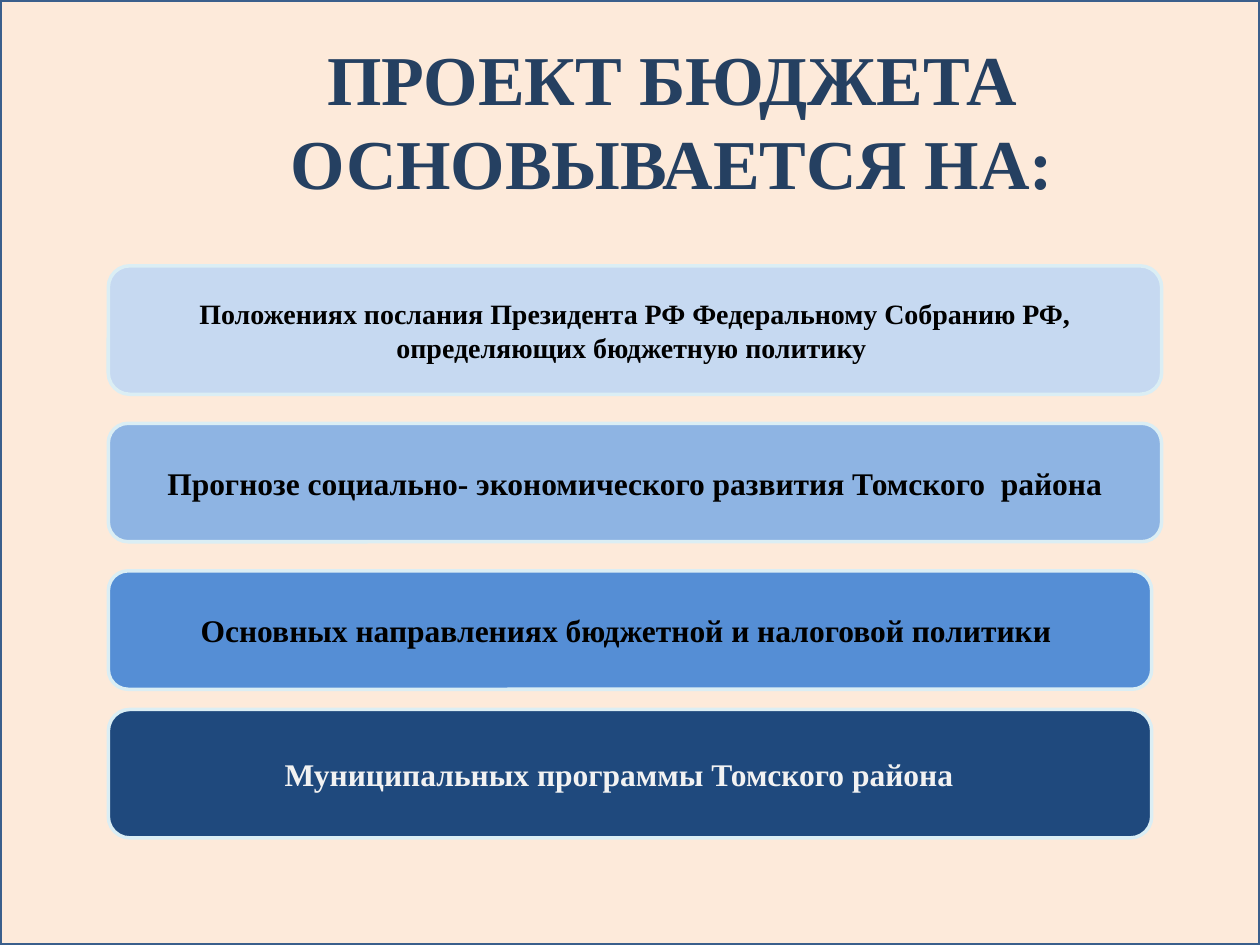
from pptx import Presentation
from pptx.dml.color import RGBColor
from pptx.enum import shapes, text
from pptx.util import Pt

FONT = "Times New Roman"
CREAM = RGBColor(0xFD, 0xEA, 0xDA)
FRAME = RGBColor(0x3A, 0x5F, 0x8C)
NAVY = RGBColor(0x25, 0x40, 0x61)
BAR_EDGE = RGBColor(0xDB, 0xEE, 0xF4)
PALE_BLUE = RGBColor(0xC6, 0xD9, 0xF1)
LIGHT_BLUE = RGBColor(0x8E, 0xB4, 0xE3)
MID_BLUE = RGBColor(0x55, 0x8E, 0xD5)
DARK_BLUE = RGBColor(0x1F, 0x49, 0x7D)
BLACK = RGBColor(0, 0, 0)
OFF_WHITE = RGBColor(0xF2, 0xF2, 0xF2)

WIDTH, HEIGHT = 720, 540
BAR_LEFT = 61.9
CENTER, LEFT = text.PP_ALIGN.CENTER, text.PP_ALIGN.LEFT

# top, width, height, fill, text, size, colour, alignment, left indent
BARS = [
    (151.9, 601.9, 73.4, PALE_BLUE,
     "Положениях послания Президента РФ Федеральному Собранию РФ, "
     "определяющих бюджетную политику ", 16, BLACK, CENTER, 0),
    (241.9, 601.9, 67.7, LIGHT_BLUE,
     "Прогнозе социально- экономического развития Томского  района",
     18, BLACK, CENTER, 0),
    (326.2, 596.2, 67.7, MID_BLUE,
     "Основных направлениях бюджетной и налоговой политики ",
     18, BLACK, CENTER, 0),
    (405.4, 596.2, 73.4, DARK_BLUE,
     "Муниципальных программы Томского района", 18, OFF_WHITE, LEFT, 90),
]


def add_box(slide, kind, left, top, width, height, fill, edge):
    sp = slide.shapes.add_shape(kind, Pt(left), Pt(top), Pt(width), Pt(height))
    sp.shadow.inherit = False
    sp.fill.solid()
    sp.fill.fore_color.rgb = fill
    sp.line.color.rgb = edge
    sp.line.width = Pt(2)
    return sp


def write(sp, words, size, color, align=CENTER):
    tf = sp.text_frame
    tf.word_wrap = True
    p = tf.paragraphs[0]
    p.alignment = align
    r = p.add_run()
    r.text = words
    r.font.name = FONT
    r.font.size = Pt(size)
    r.font.bold = True
    r.font.color.rgb = color


def add_title(slide, words):
    sp = slide.shapes.add_textbox(Pt(11.5), Pt(16.6), Pt(745.2), Pt(152.6))
    write(sp, words, 40, NAVY)


def add_bar(slide, top, width, height, fill, words, size, color, align, indent):
    sp = add_box(slide, shapes.MSO_SHAPE.ROUNDED_RECTANGLE,
                 BAR_LEFT, top, width, height, fill, BAR_EDGE)
    sp.text_frame.vertical_anchor = text.MSO_ANCHOR.MIDDLE
    sp.text_frame.margin_left = Pt(7.2 + indent)
    write(sp, words, size, color, align)


def main():
    prs = Presentation()
    prs.slide_width, prs.slide_height = Pt(WIDTH), Pt(HEIGHT)
    slide = prs.slides.add_slide(prs.slide_layouts[6])
    add_box(slide, shapes.MSO_SHAPE.RECTANGLE, 0, 0, WIDTH, HEIGHT, CREAM, FRAME)
    add_title(slide, "ПРОЕКТ БЮДЖЕТА ОСНОВЫВАЕТСЯ НА:")
    for bar in BARS:
        add_bar(slide, *bar)
    prs.save("out.pptx")


if __name__ == "__main__":
    main()
